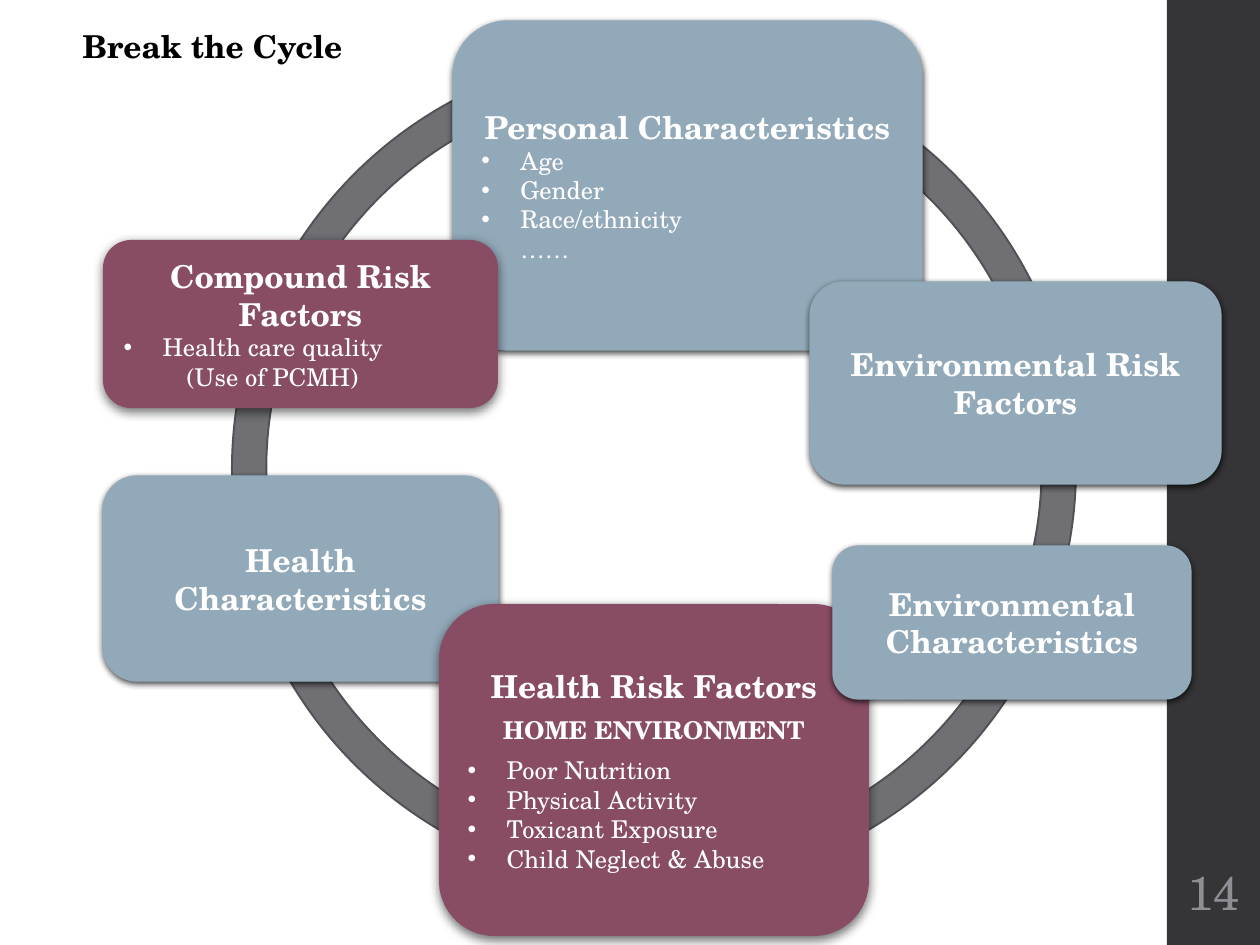
"""Build the Break the Cycle slide: six risk cards around a ring."""
import pptx
import pptx.dml.color
import pptx.enum.shapes
import pptx.enum.text
import pptx.oxml
import pptx.oxml.ns
import pptx.util

PX = 914400 / 126
THEME = {
    "font": "TeX Gyre Schola",
    "white": "FFFFFF", "black": "000000", "number": "8E8E94",
    "band": "353537", "ring": "6F6F74", "ring_edge": "525256",
    "blue": "92A9B9", "plum": "884C64",
    "heading": 18, "body": 14, "page_number": 27,
}
SHADOWS = {"blue": (75, 4, 1.2), "plum": (55, 6, 2)}
HANGING = 39
SHAPE = pptx.enum.shapes.MSO_SHAPE
CENTER = pptx.enum.text.PP_ALIGN.CENTER
LEFT = pptx.enum.text.PP_ALIGN.LEFT
MIDDLE = pptx.enum.text.MSO_ANCHOR.MIDDLE

STYLES = {
    "heading": (CENTER, "heading", True, 0, 0, 0),
    "subheading": (CENTER, "body", True, 0, 0, 6),
    "bullet": (LEFT, "body", False, HANGING, -HANGING, 0),
    "continued": (LEFT, "body", False, HANGING, 0, 0),
    "deeper": (LEFT, "body", False, 63, 0, 0),
    "number": (CENTER, "page_number", False, 0, 0, 0),
}

CARDS = [
    ("blue", (103, 476, 395, 205), [("heading", "Health Characteristics")]),
    ("blue", (453, 21, 469, 329), [
        ("heading", "Personal Characteristics"), ("bullet", "Age"),
        ("bullet", "Gender"), ("bullet", "Race/ethnicity"),
        ("continued", "……")]),
    ("blue", (810, 282, 411, 202), [("heading", "Environmental Risk Factors")]),
    ("plum", (439, 604, 430, 332), [
        ("heading", "Health Risk Factors"),
        ("subheading", "HOME ENVIRONMENT"), ("bullet", "Poor Nutrition"),
        ("bullet", "Physical Activity"), ("bullet", "Toxicant Exposure"),
        ("bullet", "Child Neglect & Abuse")]),
    ("plum", (103, 240, 395, 168), [
        ("heading", "Compound Risk Factors"),
        ("bullet", "Health care quality"), ("deeper", "(Use of PCMH)")]),
    ("blue", (833, 546, 358, 153), [("heading", "Environmental Characteristics")]),
]


def add_block(preset, bounds, fill, edge=None, edge_width=0.75):
    block = page.shapes.add_shape(preset, *(round(n * PX) for n in bounds))
    block.shadow.inherit = False
    block.fill.solid()
    block.fill.fore_color.rgb = pptx.dml.color.RGBColor.from_string(THEME[fill])
    if edge:
        block.line.color.rgb = pptx.dml.color.RGBColor.from_string(THEME[edge])
        block.line.width = pptx.util.Pt(edge_width)
    else:
        block.line.fill.background()
    return block


def write_text(frame, entries, color):
    frame.word_wrap = True
    for index, (style, text) in enumerate(entries):
        align, size, bold, margin, indent, gap = STYLES[style]
        para = frame.add_paragraph() if index else frame.paragraphs[0]
        para.alignment = align
        para.space_before = para.space_after = pptx.util.Pt(gap)
        properties = para._p.get_or_add_pPr()
        properties.set("marL", str(round(margin * PX)))
        properties.set("indent", str(round(indent * PX)))
        if style == "bullet":
            namespace = pptx.oxml.ns.nsdecls("a")
            properties.append(pptx.oxml.parse_xml(f'<a:buFont {namespace} typeface="Arial"/>'))
            properties.append(pptx.oxml.parse_xml(f'<a:buChar {namespace} char="•"/>'))
        span = para.add_run()
        span.text = text
        span.font.name = THEME["font"]
        span.font.size = pptx.util.Pt(THEME[size])
        span.font.bold = bold
        span.font.color.rgb = pptx.dml.color.RGBColor.from_string(THEME[color])


deck = pptx.Presentation()
deck.slide_width = round(1260 * PX)
deck.slide_height = round(945 * PX)
page = deck.slides.add_slide(deck.slide_layouts[6])

add_block(SHAPE.RECTANGLE, (1167, 0, 94, 945), "band")
ring = add_block(SHAPE.DONUT, (232, 50, 844, 838), "ring", "ring_edge", 1.1)
ring.adjustments[0] = 0.041

number_box = page.shapes.add_textbox(*(round(n * PX) for n in (1167, 851, 94, 82)))
number_frame = number_box.text_frame
number_frame.margin_left = number_frame.margin_right = pptx.util.Inches(0.05)
number_frame.vertical_anchor = MIDDLE
write_text(number_frame, [("number", "14")], "number")

for fill, bounds, entries in CARDS:
    card = add_block(SHAPE.ROUNDED_RECTANGLE, bounds, fill, "blue" if fill == "blue" else None)
    opacity, blur, distance = SHADOWS[fill]
    effects = card._element.spPr.find(pptx.oxml.ns.qn("a:effectLst"))
    effects.append(pptx.oxml.parse_xml(
        f'<a:outerShdw {pptx.oxml.ns.nsdecls("a")} blurRad="{pptx.util.Pt(blur)}" '
        f'dist="{pptx.util.Pt(distance)}" dir="5400000" rotWithShape="0">'
        f'<a:srgbClr val="{THEME["black"]}"><a:alpha val="{opacity * 1000}"/>'
        '</a:srgbClr></a:outerShdw>'))
    card.text_frame.vertical_anchor = MIDDLE
    write_text(card.text_frame, entries, "white")

title_box = page.shapes.add_textbox(*(round(n * PX) for n in (-27, 21, 479, 50)))
write_text(title_box.text_frame, [("heading", "Break the Cycle")], "black")

deck.save("out.pptx")
